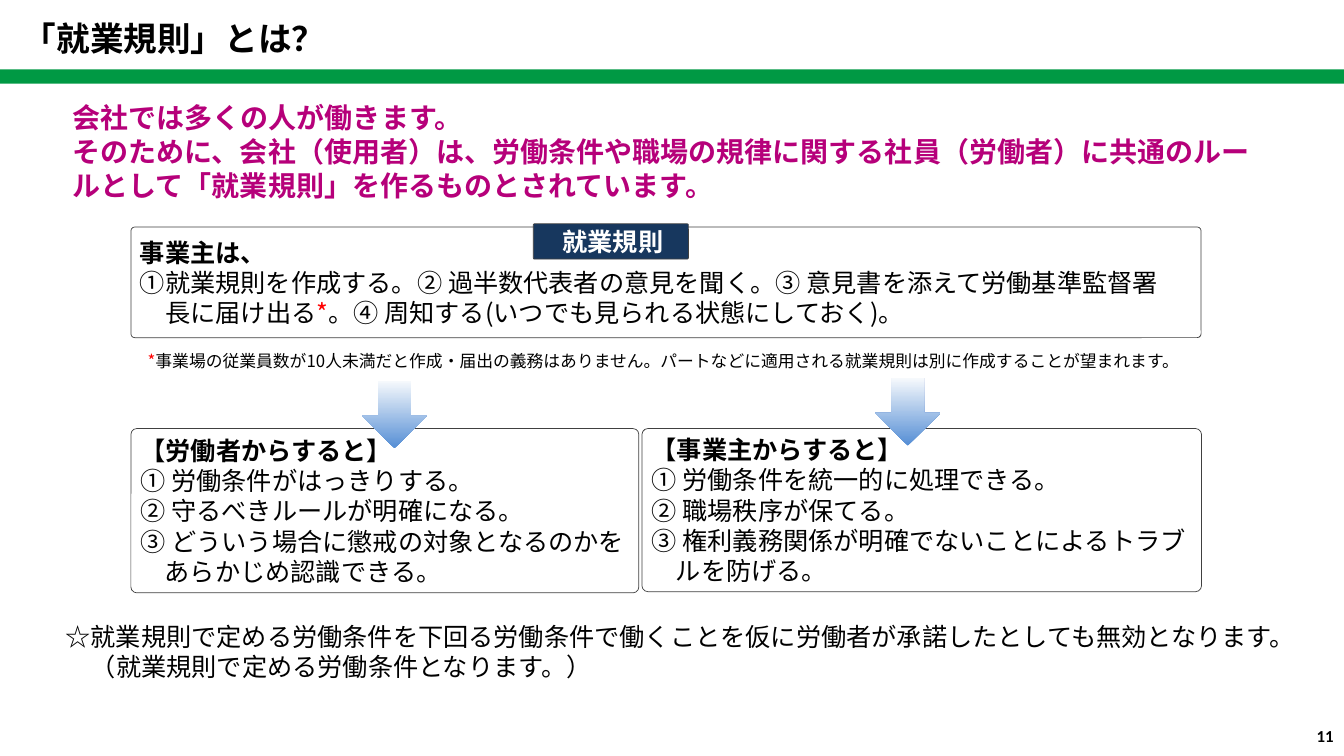
from dataclasses import dataclass

from lxml.etree import SubElement
from pptx import Presentation
from pptx.dml.color import RGBColor
from pptx.enum.shapes import MSO_SHAPE
from pptx.enum.text import MSO_ANCHOR, PP_ALIGN
from pptx.oxml.ns import qn
from pptx.shapes.autoshape import Shape
from pptx.slide import Slide
from pptx.util import Cm, Pt

BLACK = RGBColor(0x00, 0x00, 0x00)
WHITE = RGBColor(0xFF, 0xFF, 0xFF)
RED = RGBColor(0xFF, 0x00, 0x00)
GREEN = RGBColor(0x00, 0x99, 0x44)
NAVY = RGBColor(0x17, 0x37, 0x5E)
MAGENTA = RGBColor(0xB6, 0x00, 0x7A)
OUTLINE = RGBColor(0x40, 0x40, 0x40)
ARROW_BLUE = RGBColor(0x55, 0x8E, 0xD5)
ARROW_PALE = RGBColor(0xF6, 0xF9, 0xFC)

JP_FONT = "Noto Sans CJK JP"
TIGHT = (0.2, 0.1, 0.1, 0.1)
NORMAL = (0.25, 0.13, 0.25, 0.13)


@dataclass(frozen=True)
class Para:
    text: str
    bold: bool = False
    left: float = 0
    hang: float = 0


@dataclass(frozen=True)
class Box:
    """A rounded box with text; lengths in cm, sizes in points."""
    at: tuple[float, float, float, float]
    paras: list[Para]
    fill: RGBColor | None = None
    color: RGBColor = BLACK
    size: float = 18
    insets: tuple[float, float, float, float] = TIGHT
    adj: float = 0.036
    align: PP_ALIGN = PP_ALIGN.LEFT
    spacing: float | None = None


@dataclass(frozen=True)
class Label:
    """A plain text box; lengths in cm, sizes in points."""
    at: tuple[float, float, float, float]
    paras: list[Para]
    size: float
    font: str = JP_FONT
    align: PP_ALIGN = PP_ALIGN.LEFT
    anchor: MSO_ANCHOR = MSO_ANCHOR.TOP
    wrap: bool = True


def hanging(title: str, *items: str) -> list[Para]:
    return [Para(title, True, 0.61, 0.61)] + [Para(t, False, 0.61, 0.61) for t in items]


BOXES = [
    # What the employer does, with its heading tag
    Box((3.3, 5.72, 26.97, 2.79), [
        Para("事業主は、", True),
        Para("①就業規則を作成する。② 過半数代表者の意見を聞く。③ 意見書を添えて労働基準監督署"),
        Para("長に届け出る*。④ 周知する(いつでも見られる状態にしておく)。", left=0.64),
    ], WHITE),
    Box((13.44, 5.64, 3.91, 0.89), [Para("就業規則", True)], NAVY, WHITE,
        align=PP_ALIGN.CENTER, spacing=22),
    # The two points of view
    Box((3.3, 10.8, 12.8, 4.14), hanging(
        "【労働者からすると】",
        "① 労働条件がはっきりする。",
        "② 守るべきルールが明確になる。",
        "③ どういう場合に懲戒の対象となるのかをあらかじめ認識できる。"), WHITE),
    Box((16.18, 10.8, 14.1, 4.11), hanging(
        "【事業主からすると】",
        "① 労働条件を統一的に処理できる。",
        "② 職場秩序が保てる。",
        "③ 権利義務関係が明確でないことによるトラブルを防げる。"), WHITE),
    # Lead text and footnote
    Box((1.52, 2.34, 30.61, 2.95), [
        Para("会社では多くの人が働きます。", True),
        Para("そのために、会社（使用者）は、労働条件や職場の規律に関する社員（労働者）に"
             "共通のルールとして「就業規則」を作るものとされています。", True),
    ], color=MAGENTA, size=20, insets=NORMAL, adj=0.07),
    Box((3.51, 8.41, 26.72, 1.12), [
        Para("*事業場の従業員数が10人未満だと作成・届出の義務はありません。"
             "パートなどに適用される就業規則は別に作成することが望まれます。"),
    ], size=12, spacing=22),
]

LABELS = [
    Label((0.33, 0.33, 30, 1.27), [Para("「就業規則」とは？", True)], 24),
    Label((1.4, 15.52, 31.93, 1.8), [
        Para("☆就業規則で定める労働条件を下回る労働条件で働くことを仮に労働者が承諾したとしても無効となります。"),
        Para("（就業規則で定める労働条件となります。）", left=0.64),
    ], 18, wrap=False),
    Label((25.96, 18.03, 7.9, 1.02), [Para("11", True)], 12, "Calibri",
          PP_ALIGN.RIGHT, MSO_ANCHOR.MIDDLE),
]

ARROWS = [(9.12, 9.6), (22.05, 9.53)]


def write(s: Shape, paras: list[Para], size: float, color: RGBColor, font: str,
          align: PP_ALIGN, spacing: float | None = None) -> None:
    tf = s.text_frame
    for i, para in enumerate(paras):
        p = tf.add_paragraph() if i else tf.paragraphs[0]
        p.alignment = align
        if spacing:
            p.line_spacing = Pt(spacing)
        p.font.size, p.font.bold = Pt(size), para.bold
        p.font.color.rgb = color
        p.font.name = font
        pPr = p._p.get_or_add_pPr()
        SubElement(pPr.find(qn("a:defRPr")), qn("a:ea"), typeface=font)
        pPr.set("marL", str(Cm(para.left)))
        pPr.set("indent", str(-Cm(para.hang)))
        # Asterisks are red
        for part in filter(None, para.text.partition("*")):
            r = p.add_run()
            r.text = part
            if part == "*":
                r.font.color.rgb = RED


def add_plain(slide: Slide, kind: MSO_SHAPE, at: tuple[float, float, float, float]) -> Shape:
    s = slide.shapes.add_shape(kind, *map(Cm, at))
    s.shadow.inherit = False
    s.line.fill.background()
    return s


def add_box(slide: Slide, box: Box) -> None:
    s = add_plain(slide, MSO_SHAPE.ROUNDED_RECTANGLE, box.at)
    s.adjustments[0] = box.adj
    if box.fill is None:
        s.fill.background()
    else:
        s.fill.solid()
        s.fill.fore_color.rgb = box.fill
        s.line.color.rgb = OUTLINE
        s.line.width = Pt(0.5)
    tf = s.text_frame
    tf.word_wrap = True
    tf.vertical_anchor = MSO_ANCHOR.MIDDLE
    tf.margin_left, tf.margin_top, tf.margin_right, tf.margin_bottom = map(Cm, box.insets)
    write(s, box.paras, box.size, box.color, JP_FONT, box.align, box.spacing)


def add_label(slide: Slide, label: Label) -> None:
    s = slide.shapes.add_textbox(*map(Cm, label.at))
    s.text_frame.word_wrap = label.wrap
    s.text_frame.vertical_anchor = label.anchor
    write(s, label.paras, label.size, BLACK, label.font, label.align)


def add_arrow(slide: Slide, left: float, top: float) -> None:
    s = add_plain(slide, MSO_SHAPE.DOWN_ARROW, (left, top, 1.65, 1.7))
    s.fill.gradient()
    s.fill.gradient_angle = 90
    for stop, color in zip(s.fill.gradient_stops, (ARROW_BLUE, ARROW_PALE)):
        stop.color.rgb = color


def main() -> None:
    prs = Presentation()
    prs.slide_width, prs.slide_height = Cm(33.87), Cm(19.05)
    slide = prs.slides.add_slide(prs.slide_layouts[6])

    # Green rule under the title
    bar = add_plain(slide, MSO_SHAPE.RECTANGLE, (0, 1.75, 33.87, 0.36))
    bar.fill.solid()
    bar.fill.fore_color.rgb = GREEN

    for box in BOXES:
        add_box(slide, box)
    for left, top in ARROWS:
        add_arrow(slide, left, top)
    for label in LABELS:
        add_label(slide, label)

    prs.save("out.pptx")


if __name__ == "__main__":
    main()
